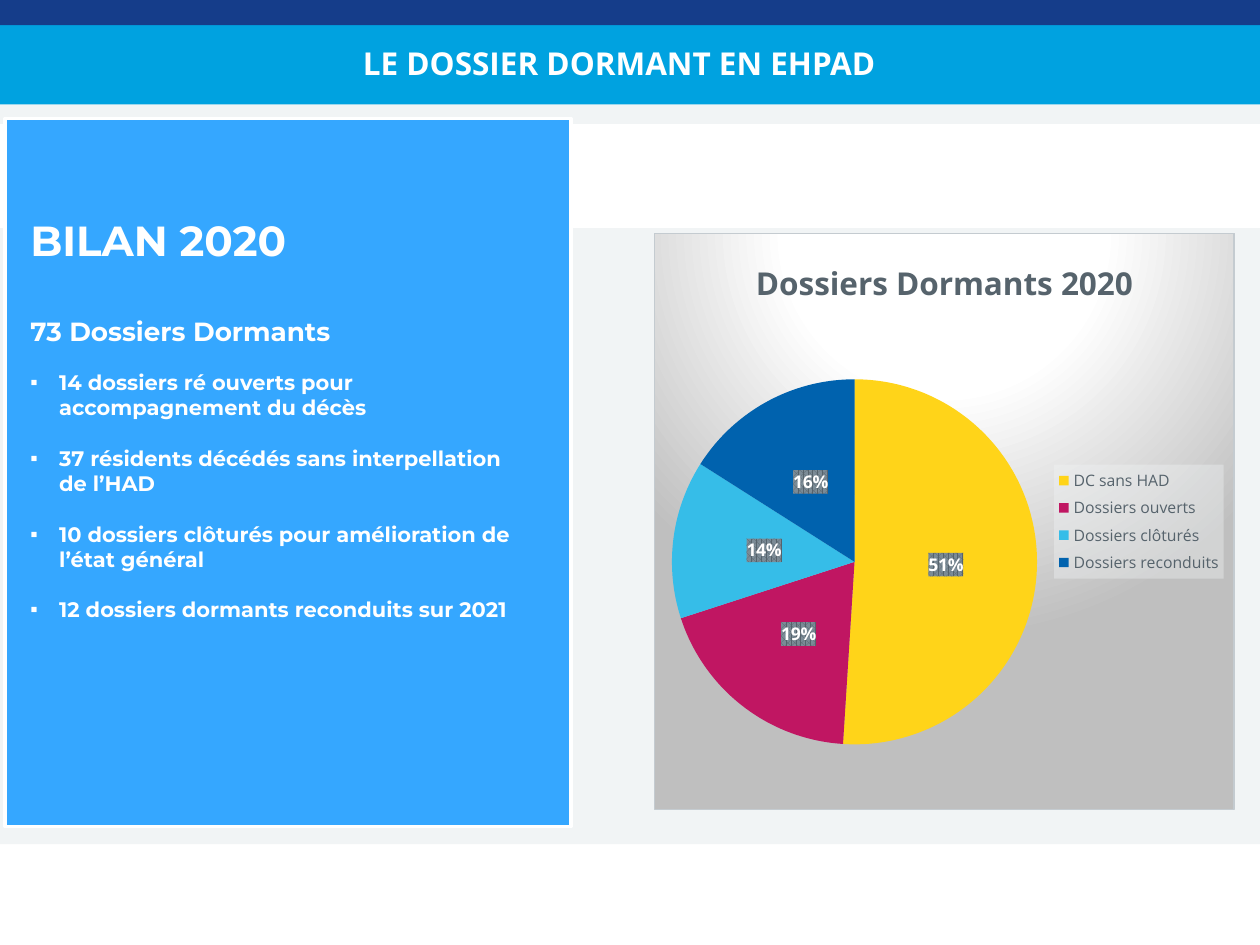
from lxml.etree import SubElement
from pptx import Presentation
from pptx.chart.data import CategoryChartData
from pptx.dml.color import RGBColor
from pptx.enum.chart import XL_CHART_TYPE, XL_LABEL_POSITION, XL_LEGEND_POSITION
from pptx.enum.shapes import MSO_SHAPE
from pptx.enum.text import MSO_ANCHOR, MSO_AUTO_SIZE, PP_ALIGN
from pptx.oxml import parse_xml
from pptx.oxml.ns import nsdecls, qn
from pptx.util import Inches, Pt

COLORS = {
    "white": "FFFFFF", "navy": "153D8A", "cyan": "00A2E0", "pale": "F1F4F5",
    "panel": "35A7FF", "ink": "272D31", "slate": "56636C", "silver": "BFBFBF",
    "border": "C4CBD0", "yellow": "FFD419", "magenta": "C01662",
    "sky": "36BDE8", "blue": "0062AE",
}

deck = Presentation()
deck.slide_width, deck.slide_height = Inches(10), Inches(7.5)
page = deck.slides.add_slide(deck.slide_layouts[1])
column, row = deck.slide_width / 100, deck.slide_height / 75


def grid(left, top, width, height):
    return int(left * column), int(top * row), int(width * column), int(height * row)


def write(para, text, font="Montserrat", size=12, align=PP_ALIGN.LEFT, before=0, bullet=None):
    properties = para._p.get_or_add_pPr()
    indent = Inches(0.23) if bullet else 0
    properties.set("marL", str(indent))
    properties.set("indent", str(-indent))
    if bullet:
        SubElement(properties, qn("a:buChar")).set("char", bullet)
    else:
        SubElement(properties, qn("a:buNone"))
    para.alignment = align
    para.space_before = Pt(before)
    span = para.add_run()
    span.text = text
    span.font.name, span.font.size, span.font.bold = font, Pt(size), True
    span.font.color.rgb = RGBColor.from_string(COLORS["white"])


bands = [
    ((0, 0, 100, 67), "pale", False),
    ((0, 0, 100, 8.3), "cyan", False),
    ((0, 0, 100, 2), "navy", False),
    ((0, 10, 100, 8), "white", True),
    ((0.4, 9.4, 44.9, 56.2), "panel", True),
]
for place, color, outlined in bands:
    band = page.shapes.add_shape(MSO_SHAPE.RECTANGLE, *grid(*place))
    band.shadow.inherit = False
    band.fill.solid()
    band.fill.fore_color.rgb = RGBColor.from_string(COLORS[color])
    if outlined:
        band.line.color.rgb = RGBColor.from_string(COLORS["white"])
        band.line.width = Pt(2)
    else:
        band.line.fill.background()

title, body = page.shapes.title, page.placeholders[1]
for box, place in [(title, (26.9, 3, 44.5, 4)), (body, (1.4, 16.5, 41.8, 35.6))]:
    box.left, box.top, box.width, box.height = grid(*place)
    box.element.getparent().append(box.element)
    box.text_frame.auto_size = MSO_AUTO_SIZE.SHAPE_TO_FIT_TEXT
    box.text_frame.vertical_anchor = MSO_ANCHOR.TOP
title.text_frame.word_wrap = False
body.text_frame.word_wrap = True
write(title.text_frame.paragraphs[0], "LE DOSSIER DORMANT EN EHPAD",
      font="Open Sans", size=18, align=PP_ALIGN.CENTER)

write(body.text_frame.paragraphs[0], "BILAN 2020", size=24)
write(body.text_frame.add_paragraph(), "73 Dossiers Dormants", size=15, before=29)
findings = [
    "14 dossiers ré ouverts pour accompagnement du décès",
    "37 résidents décédés sans interpellation de l’HAD",
    "10 dossiers clôturés pour amélioration de l’état général",
    "12 dossiers dormants reconduits sur 2021",
]
for index, finding in enumerate(findings):
    write(body.text_frame.add_paragraph(), finding, before=14.5 if index else 13, bullet="▪")

slices = [
    ("DC sans HAD", 51, "yellow"), ("Dossiers ouverts", 19, "magenta"),
    ("Dossiers clôturés", 14, "sky"), ("Dossiers reconduits", 16, "blue"),
]
data = CategoryChartData()
data.categories = [name for name, value, color in slices]
data.add_series("Dossiers Dormants 2020", [value for name, value, color in slices])
chart = page.shapes.add_chart(XL_CHART_TYPE.PIE, *grid(51.9, 18.5, 46.1, 45.8), data).chart
chart.has_title = chart.has_legend = True
chart.chart_title.text_frame.text = "Dossiers Dormants 2020"
chart.legend.position = XL_LEGEND_POSITION.RIGHT
chart.legend.include_in_layout = False
plot = chart.plots[0]
plot.vary_by_categories = True
for index, (name, value, color) in enumerate(slices):
    fill = plot.series[0].points[index].format.fill
    fill.solid()
    fill.fore_color.rgb = RGBColor.from_string(COLORS[color])

plot.has_data_labels = True
labels = plot.data_labels
labels.show_percentage, labels.show_value = True, False
labels.number_format, labels.number_format_is_linked = "0%", False
labels.position = XL_LABEL_POSITION.CENTER
heading = chart.chart_title.text_frame.paragraphs[0].runs[0]
for font, size, color, bold in [
    (chart.font, 10, "ink", False), (chart.legend.font, 9, "slate", False),
    (labels.font, 10, "white", True), (heading.font, 18, "slate", True),
]:
    font.name, font.size, font.bold = "Open Sans", Pt(size), bold
    font.color.rgb = RGBColor.from_string(COLORS[color])

gradient = f"""<a:gradFill><a:gsLst>
<a:gs pos="0"><a:srgbClr val="{COLORS['white']}"/></a:gs>
<a:gs pos="39000"><a:srgbClr val="{COLORS['white']}"/></a:gs>
<a:gs pos="100000"><a:srgbClr val="{COLORS['silver']}"/></a:gs></a:gsLst>
<a:path path="circle"><a:fillToRect l="50000" t="-80000" r="50000" b="180000"/></a:path></a:gradFill>
<a:ln w="9525"><a:solidFill><a:srgbClr val="{COLORS['border']}"/></a:solidFill></a:ln>"""
veil = f"""<a:solidFill><a:srgbClr val="{COLORS['pale']}"><a:alpha val="39000"/></a:srgbClr></a:solidFill>"""
hatch = f"""<a:pattFill prst="pct75"><a:fgClr><a:srgbClr val="{COLORS['slate']}"/></a:fgClr>
<a:bgClr><a:srgbClr val="{COLORS['slate']}"><a:lumMod val="75000"/><a:lumOff val="25000"/></a:srgbClr></a:bgClr></a:pattFill>"""
for owner, paint in [(chart.element, gradient), (chart.legend._element, veil), (labels._element, hatch)]:
    owner.find(qn("c:txPr")).addprevious(
        parse_xml(f"<c:spPr {nsdecls('c', 'a')}>{paint}</c:spPr>"))

area = chart.element.chart.plotArea
for layout in area.findall(qn("c:layout")):
    area.remove(layout)
area.insert(0, parse_xml(f"""<c:layout {nsdecls('c')}><c:manualLayout>
<c:layoutTarget val="inner"/><c:xMode val="edge"/><c:yMode val="edge"/>
<c:x val="0.03"/><c:y val="0.25"/><c:w val="0.63"/><c:h val="0.64"/></c:manualLayout></c:layout>"""))

deck.save("out.pptx")
